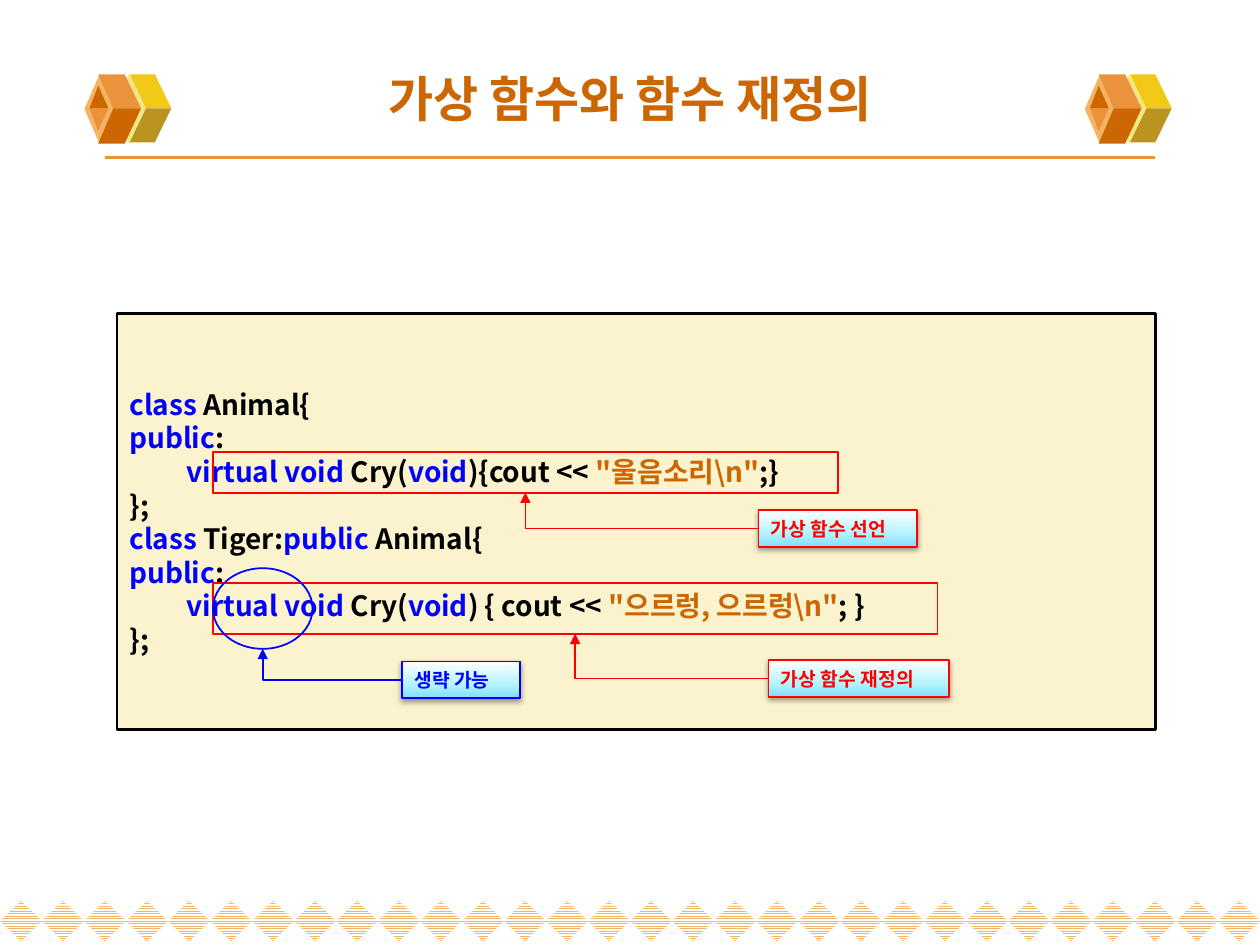
import copy

import lxml.etree
import pptx
import pptx.dml.color
import pptx.enum.dml
import pptx.enum.shapes
import pptx.enum.text
import pptx.oxml.ns
import pptx.util

Inches = pptx.util.Inches
Pt = pptx.util.Pt
qn = pptx.oxml.ns.qn
SHAPE = pptx.enum.shapes.MSO_SHAPE
CONNECTOR = pptx.enum.shapes.MSO_CONNECTOR
ALIGN = pptx.enum.text.PP_ALIGN
MIDDLE = pptx.enum.text.MSO_ANCHOR.MIDDLE

FONT = "Noto Sans CJK KR"
COLORS = {
    "black": "000000", "white": "FFFFFF", "blue": "0000FF", "red": "FF0000",
    "brown": "CC6600", "orange": "EB933B", "peach": "F5B363", "cream": "FBF2CE",
    "pale": "F1E785", "yellow": "F3C917", "olive": "BB9321",
    "sky": "81DEFF", "ice": "B2F3FC",
}
RGB = {name: pptx.dml.color.RGBColor.from_string(value) for name, value in COLORS.items()}


def add_run(paragraph, text, size, color):
    run = paragraph.add_run()
    run.text = text
    run.font.size = Pt(size)
    run.font.bold = True
    run.font.color.rgb = RGB[color]
    run.font.name = FONT
    east_asian = lxml.etree.SubElement(run.font._element, qn("a:ea"))
    east_asian.set("typeface", FONT)


def style_shape(shape, fill=None, line=None, width=1):
    shape.shadow.inherit = False
    if fill:
        shape.fill.solid()
        shape.fill.fore_color.rgb = RGB[fill]
    else:
        shape.fill.background()
    if line:
        shape.line.color.rgb = RGB[line]
        shape.line.width = Pt(width)
    else:
        shape.line.fill.background()


presentation = pptx.Presentation()
presentation.slide_width = Inches(10)
presentation.slide_height = Inches(7.5)
slide = presentation.slides.add_slide(presentation.slide_layouts[5])
shapes = slide.shapes

diamond_count = 30
diamond_width = 10 / diamond_count
for index in range(diamond_count):
    diamond = shapes.add_shape(SHAPE.DIAMOND, Inches(index * diamond_width), Inches(7.15),
                               Inches(diamond_width), Inches(0.32))
    style_shape(diamond)
    diamond.fill.patterned()
    diamond.fill.pattern = pptx.enum.dml.MSO_PATTERN.NARROW_HORIZONTAL
    diamond.fill.fore_color.rgb = RGB["peach"]
    diamond.fill.back_color.rgb = RGB["white"]

title_rule = shapes.add_connector(CONNECTOR.STRAIGHT, Inches(0.83), Inches(1.25),
                                  Inches(9.17), Inches(1.25))
title_rule.line.color.rgb = RGB["orange"]
title_rule.line.width = Pt(2.25)
lxml.etree.SubElement(title_rule._element.spPr, qn("a:effectLst"))

cube_halves = [
    ("pale", 0.19, 0.33, [
        ("yellow", [(49, 86), (69, 86), (56, 59), (36, 59)]),
        ("olive", [(49, 86), (69, 86), (56, 113), (36, 113)]),
    ]),
    ("peach", 0, 0.24, [
        ("orange", [(23, 86), (45, 86), (32, 59), (11, 59)]),
        ("brown", [(23, 86), (45, 86), (32, 114), (11, 114)]),
        ("brown", [(11, 68), (4, 86), (19, 86)]),
        ("orange", [(11, 104), (4, 86), (19, 86)]),
    ]),
]
for cube_left in (0.67, 8.61):
    for edge_color, offset, width, faces in cube_halves:
        edge = shapes.add_shape(SHAPE.DIAMOND, Inches(cube_left + offset), Inches(0.59),
                                Inches(width), Inches(0.55))
        style_shape(edge, edge_color)
        for face_color, corners in faces:
            points = [(round(cube_left * 100) + x, y) for x, y in corners]
            builder = shapes.build_freeform(*points[0], scale=Inches(1) / 100)
            builder.add_line_segments(points[1:], close=True)
            style_shape(builder.convert_to_shape(), face_color)

title = shapes.title
title.left, title.top = Inches(0.5), Inches(0.3)
title.width, title.height = Inches(9), Inches(0.95)
title.text_frame.vertical_anchor = MIDDLE
title_paragraph = title.text_frame.paragraphs[0]
title_paragraph.alignment = ALIGN.CENTER
add_run(title_paragraph, "가상 함수와 함수 재정의", 28, "brown")

code_lines = [
    [("class", "blue"), (" Animal{", "black")],
    [("public", "blue"), (":", "black")],
    [("         virtual void", "blue"), (" Cry(", "black"), ("void", "blue"),
     ("){cout << ", "black"), ("\"울음소리\\n\"", "brown"), (";}", "black")],
    [("};", "black")],
    [("class ", "blue"), ("Tiger:", "black"), ("public", "blue"), (" Animal{", "black")],
    [("public", "blue"), (":", "black")],
    [("         virtual void", "blue"), (" Cry(", "black"), ("void", "blue"),
     (") { cout << ", "black"), ("\"으르렁, 으르렁\\n\"", "brown"), ("; }", "black")],
    [("};", "black")],
]
code_box = shapes.add_shape(SHAPE.RECTANGLE, Inches(0.93), Inches(2.49), Inches(8.24), Inches(3.3))
style_shape(code_box, "cream", "black", 1.5)
code_frame = code_box.text_frame
code_frame.word_wrap = True
code_frame.vertical_anchor = MIDDLE
for index, code_line in enumerate(code_lines):
    paragraph = code_frame.add_paragraph() if index else code_frame.paragraphs[0]
    paragraph.alignment = ALIGN.LEFT
    paragraph.line_spacing = Pt(19.2)
    for text, color in code_line:
        add_run(paragraph, text, 16, color)

callouts = [
    ("가상 함수 선언", "red", SHAPE.RECTANGLE, (1.69, 3.59, 4.96, 0.32), (6.02, 4.05, 1.26, 0.29)),
    ("가상 함수 재정의", "red", SHAPE.RECTANGLE, (1.69, 4.63, 5.75, 0.4), (6.1, 5.24, 1.43, 0.29)),
    ("생략 가능", "blue", SHAPE.OVAL, (1.69, 4.51, 0.79, 0.64), (3.19, 5.25, 0.94, 0.29)),
]
for text, color, outline, mark_place, label_place in callouts:
    mark = shapes.add_shape(outline, *map(Inches, mark_place))
    style_shape(mark, line=color)

    label = shapes.add_shape(SHAPE.RECTANGLE, *map(Inches, label_place))
    style_shape(label, line=color)
    label.fill.gradient()
    label.fill.gradient_angle = 90
    stop_list = label._element.spPr.find(".//" + qn("a:gsLst"))
    stop_list.insert(1, copy.deepcopy(stop_list[0]))
    for stop, (position, stop_color) in zip(label.fill.gradient_stops,
                                            [(0, "sky"), (0.35, "ice"), (1, "white")]):
        stop.position = position
        stop.color.rgb = RGB[stop_color]
    shadow = lxml.etree.SubElement(label._element.spPr.find(qn("a:effectLst")), qn("a:outerShdw"),
                                   blurRad="40000", dist="20000", dir="5400000", rotWithShape="0")
    shadow_color = lxml.etree.SubElement(shadow, qn("a:srgbClr"), val=COLORS["black"])
    lxml.etree.SubElement(shadow_color, qn("a:alpha"), val="38000")
    label.text_frame.word_wrap = True
    label.text_frame.vertical_anchor = MIDDLE
    label_paragraph = label.text_frame.paragraphs[0]
    label_paragraph.alignment = ALIGN.JUSTIFY
    add_run(label_paragraph, text, 11, color)

    arrow = shapes.add_connector(CONNECTOR.ELBOW, label.left, label.top + label.height // 2,
                                 mark.left + mark.width // 2, mark.top + mark.height)
    arrow._element.spPr.find(qn("a:prstGeom")).set("prst", "bentConnector2")
    arrow.begin_connect(label, 1)
    if outline == SHAPE.RECTANGLE:
        arrow.end_connect(mark, 2)
    arrow.line.color.rgb = RGB[color]
    arrow.line.width = Pt(1)
    lxml.etree.SubElement(arrow.line._get_or_add_ln(), qn("a:tailEnd"), type="triangle")
    lxml.etree.SubElement(arrow._element.spPr, qn("a:effectLst"))

presentation.save("out.pptx")
